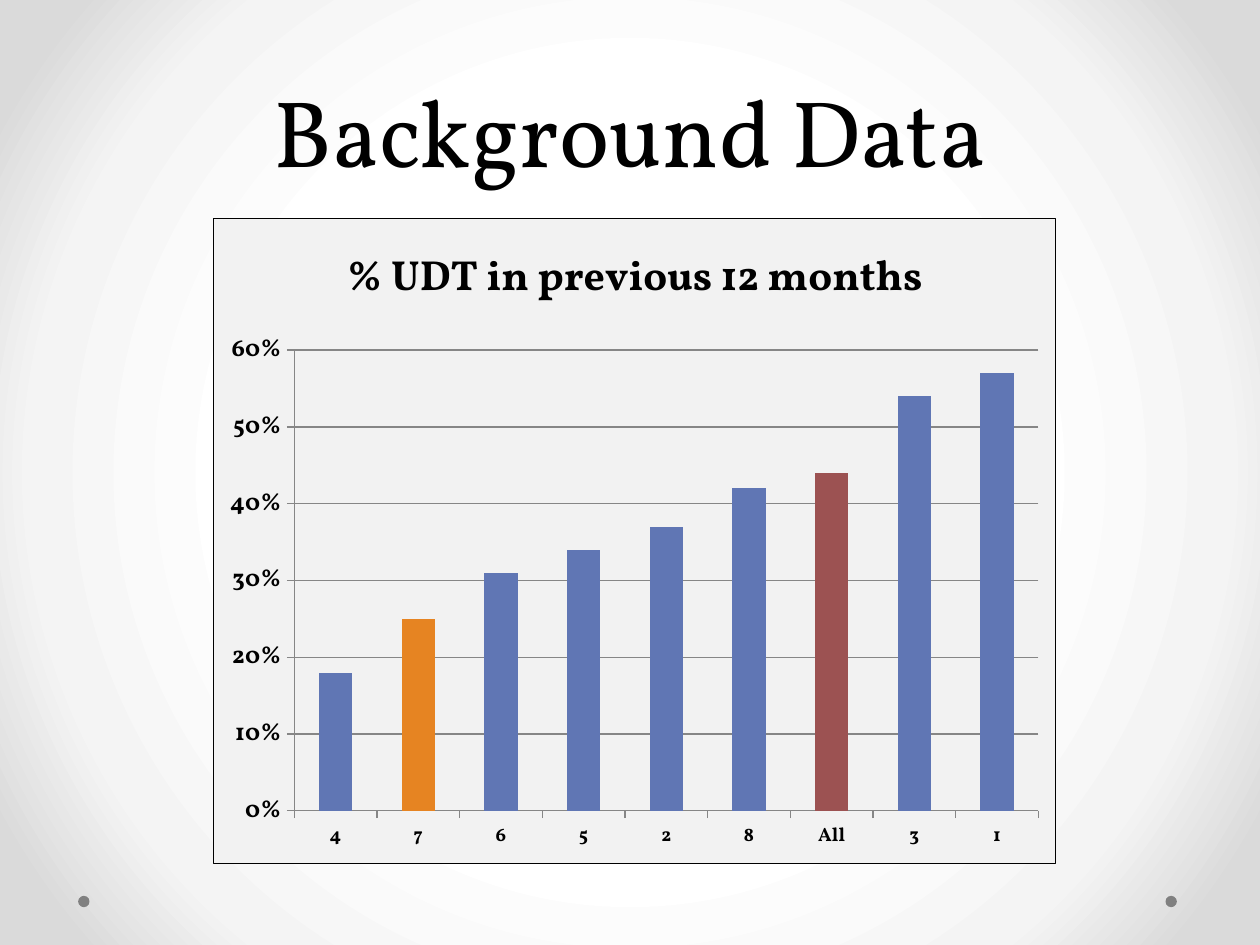
from lxml import etree
from pptx import Presentation
from pptx.chart.data import CategoryChartData
from pptx.dml.color import RGBColor
from pptx.enum.chart import XL_CHART_TYPE as ChartType, XL_TICK_MARK as Tick
from pptx.enum.shapes import MSO_SHAPE as Shape
from pptx.enum.text import MSO_ANCHOR as Anchor, PP_ALIGN as Align
from pptx.oxml import parse_xml
from pptx.oxml.ns import nsdecls, qn
from pptx.util import Inches, Pt

# Content
TITLE = "Background Data"
CHART_TITLE = "% UDT in previous 12 months"
RATES = [("4", 0.18), ("7", 0.25), ("6", 0.31), ("5", 0.34), ("2", 0.37),
         ("8", 0.42), ("All", 0.44), ("3", 0.54), ("1", 0.57)]
HIGHLIGHTS = {"7": "E68422", "All": "9C5252"}
BAR, PANEL, GRID, BLACK = "6076B4", "F2F2F2", "868686", "000000"
BACKDROP = [(50, "FFFFFF"), (76, "F4F4F4"), (92, "DADADA")]
FONT = "Vollkorn"
PLOT_AREA = {"x": 0.096, "y": 0.204, "w": 0.884, "h": 0.714}  # shares of the chart


def rgb(color):
    return RGBColor.from_string(color)


def style(font, size, bold=False):
    font.name, font.size, font.bold = FONT, Pt(size), bold
    font.color.rgb = rgb(BLACK)


def box(*lengths):
    return [Inches(length) for length in lengths]


def panel_xml(border):
    return parse_xml(
        f'<c:spPr {nsdecls("c", "a")}><a:solidFill><a:srgbClr val="{PANEL}"/></a:solidFill>'
        f'{border}</c:spPr>')


prs = Presentation()
prs.slide_width, prs.slide_height = box(10, 7.5)
slide = prs.slides.add_slide(prs.slide_layouts[5])

# Radial background
slide.background.fill.solid()
solid = slide.background._cSld.bg.bgPr.find(qn("a:solidFill"))
stops = "".join(f'<a:gs pos="{share * 1000}"><a:srgbClr val="{color}"/></a:gs>'
                for share, color in BACKDROP)
solid.getparent().replace(solid, parse_xml(
    f'<a:gradFill {nsdecls("a")} rotWithShape="1"><a:gsLst>{stops}</a:gsLst>'
    '<a:path path="circle"><a:fillToRect l="50000" t="50000" r="50000" b="50000"/>'
    '</a:path></a:gradFill>'))

# Corner dots
for left in (0.62, 9.25):
    dot = slide.shapes.add_shape(Shape.OVAL, *box(left, 7.11, 0.09, 0.09))
    dot.shadow.inherit = False
    dot.fill.solid()
    dot.fill.fore_color.rgb = rgb("808080")
    dot.line.fill.background()

# Title
title = slide.shapes.title
title.left, title.top, title.width, title.height = box(0.5, 0, 9, 1.53)
title.text_frame.text = TITLE
title.text_frame.vertical_anchor = Anchor.BOTTOM
heading = title.text_frame.paragraphs[0]
heading.alignment, heading.line_spacing = Align.CENTER, Pt(58)
style(heading.runs[0].font, 54)

# Chart
rates = CategoryChartData(number_format="0%")
rates.categories = [group for group, _ in RATES]
rates.add_series(CHART_TITLE, [rate for _, rate in RATES])
chart = slide.shapes.add_chart(ChartType.COLUMN_CLUSTERED, *box(1.69, 1.73, 6.69, 5.13),
                               rates).chart
style(chart.font, 10)
chart.has_legend = False
chart.has_title = True
chart.chart_title.text_frame.text = CHART_TITLE
style(chart.chart_title.text_frame.paragraphs[0].runs[0].font, 24, True)

# Bars
plot = chart.plots[0]
plot.gap_width, plot.vary_by_categories = 150, False
bars = plot.series[0]
bars.format.fill.solid()
bars.format.fill.fore_color.rgb = rgb(BAR)
for index, (group, _) in enumerate(RATES):
    if group in HIGHLIGHTS:
        fill = bars.points[index].format.fill
        fill.solid()
        fill.fore_color.rgb = rgb(HIGHLIGHTS[group])

# Axes
groups, percents = chart.category_axis, chart.value_axis
percents.minimum_scale, percents.maximum_scale, percents.major_unit = 0, 0.6, 0.1
percents.has_major_gridlines = True
percents.tick_labels.number_format = "0%"
percents.tick_labels.number_format_is_linked = False
for axis, size in ((groups, 11), (percents, 14)):
    axis.major_tick_mark, axis.minor_tick_mark = Tick.OUTSIDE, Tick.NONE
    style(axis.tick_labels.font, size, True)
for line in (groups.format.line, percents.format.line, percents.major_gridlines.format.line):
    line.color.rgb, line.width = rgb(GRID), Pt(0.75)

# Panel fills, border and plot position
chart_part = chart._chartSpace.find(qn("c:chart"))
chart_part.addnext(panel_xml(
    f'<a:ln w="{Pt(0.75)}"><a:solidFill><a:srgbClr val="{BLACK}"/></a:solidFill></a:ln>'))
plot_area = chart_part.find(qn("c:plotArea"))
plot_area.append(panel_xml("<a:ln><a:noFill/></a:ln>"))
for old in plot_area.findall(qn("c:layout")):
    plot_area.remove(old)
layout = etree.Element(qn("c:layout"))
manual = etree.SubElement(layout, qn("c:manualLayout"))
settings = {"layoutTarget": "inner", "xMode": "edge", "yMode": "edge", **PLOT_AREA}
for tag, value in settings.items():
    etree.SubElement(manual, qn(f"c:{tag}")).set("val", str(value))
plot_area.insert(0, layout)

prs.save("out.pptx")
